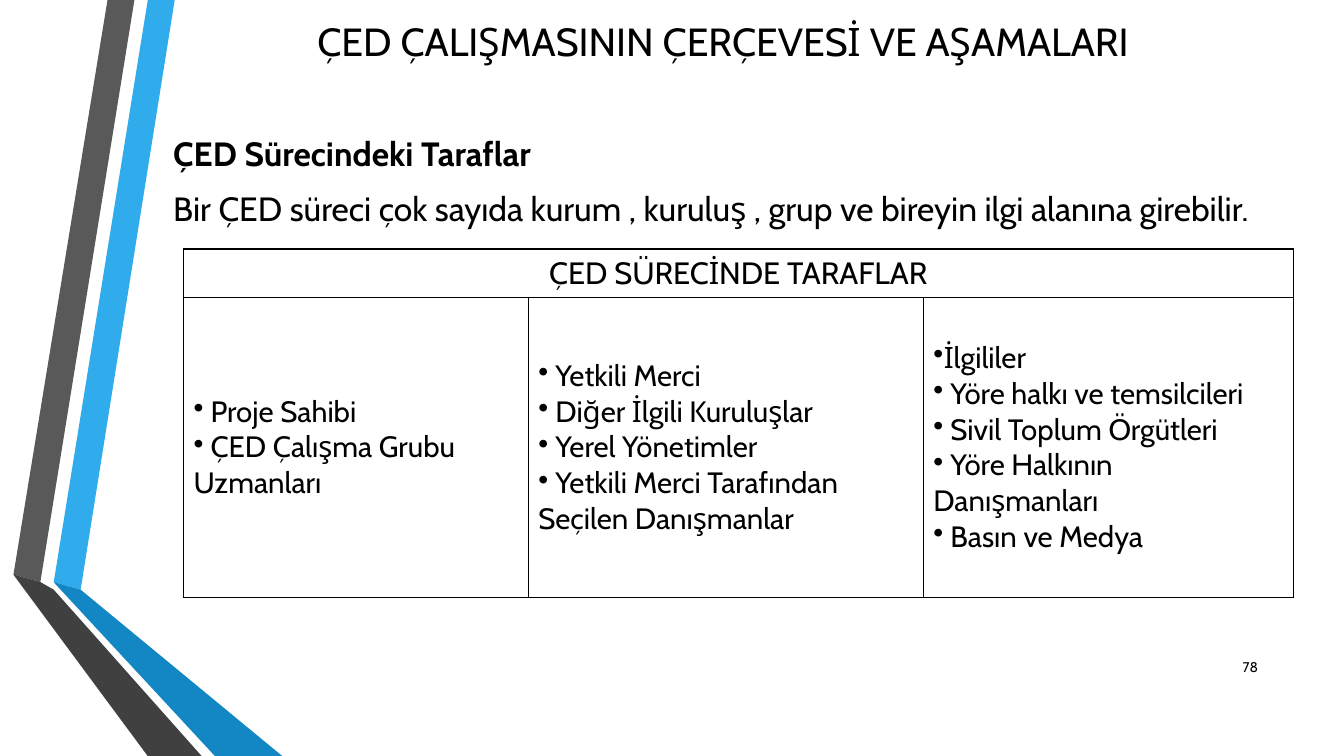
from collections import namedtuple

from lxml import etree
from pptx import Presentation
from pptx.dml.color import RGBColor
from pptx.enum.text import MSO_ANCHOR, PP_ALIGN
from pptx.oxml.ns import qn
from pptx.util import Inches, Pt

LEFT, CENTER, RIGHT = PP_ALIGN.LEFT, PP_ALIGN.CENTER, PP_ALIGN.RIGHT
TOP, MIDDLE = MSO_ANCHOR.TOP, MSO_ANCHOR.MIDDLE

BLACK = RGBColor(0x00, 0x00, 0x00)
SKY = RGBColor(0x30, 0xAC, 0xEC)
BLUE = RGBColor(0x12, 0x87, 0xC3)
NAVY = RGBColor(0x0C, 0x5A, 0x82)
GRAY = RGBColor(0x59, 0x59, 0x59)
CHARCOAL = RGBColor(0x40, 0x40, 0x40)
COAL = RGBColor(0x26, 0x26, 0x26)

FONT = "Cabin"
SLIDE_WIDTH, SLIDE_HEIGHT = Inches(13.33), Inches(7.5)

Box = namedtuple("Box", "left top width height")


def percent_box(left, top, width, height):
    across, down = SLIDE_WIDTH / 100, SLIDE_HEIGHT / 100
    return Box(round(left * across), round(top * down), round(width * across), round(height * down))


SLIDE_BOX = percent_box(0, 0, 100, 100)
TITLE_BOX = percent_box(12.68, 3.33, 82.2, 4.27)
INTRO_BOX = percent_box(12.15, 16.93, 82.2, 14.67)
TABLE_BOX = percent_box(13.65, 32.93, 82.57, 46.13)
NUMBER_BOX = percent_box(89.85, 85.6, 4.5, 5.33)

RIBBONS = [
    (SKY, [(3.75, 77.07), (5.77, 77.73), (12.97, 0), (10.88, 0)]),
    (GRAY, [(10.42, 0), (8.32, 0), (1.2, 76.4), (3.3, 76.93)]),
    (COAL, [(1.2, 76.4), (10.88, 100), (11.32, 100)]),
    (NAVY, [(3.75, 77.2), (15.6, 100), (16.05, 100)]),
    (BLUE, [(3.75, 77.07), (16.05, 100), (21.22, 100), (5.77, 77.73)]),
    (CHARCOAL, [(15.15, 100), (3.6, 77.73), (3.3, 76.93), (1.2, 76.4), (11.32, 100)]),
]

COLUMN_WEIGHTS = [3.42, 3.92, 3.67]
ROW_WEIGHTS = [0.48, 2.98]
TABLE_HEADING = "ÇED SÜRECİNDE TARAFLAR"
PARTIES = [
    [" Proje Sahibi", " ÇED Çalışma Grubu Uzmanları"],
    [" Yetkili Merci", " Diğer İlgili Kuruluşlar", " Yerel Yönetimler",
     " Yetkili Merci Tarafından Seçilen Danışmanlar"],
    ["İlgililer", " Yöre halkı ve temsilcileri", " Sivil Toplum Örgütleri",
     " Yöre Halkının Danışmanları", " Basın ve Medya"],
]


def write_paragraphs(frame, lines, size, alignment=LEFT, space_after=0, bullet=None):
    for index, (text, bold) in enumerate(lines):
        paragraph = frame.paragraphs[0] if index == 0 else frame.add_paragraph()
        paragraph.alignment = alignment
        paragraph.space_after = Pt(space_after)
        run = paragraph.add_run()
        run.text = text
        formats = {"name": FONT, "size": Pt(size), "bold": bold}
        for name, value in formats.items():
            setattr(run.font, name, value)
        run.font.color.rgb = BLACK
        if bullet:
            properties = paragraph._p.get_or_add_pPr()
            properties.set("marL", "0")
            properties.set("indent", "0")
            etree.SubElement(properties, qn("a:buChar")).set("char", bullet)


def add_text(slide, box, lines, size, anchor=MIDDLE, **formats):
    frame = slide.shapes.add_textbox(*box).text_frame
    frame.word_wrap = True
    frame.vertical_anchor = anchor
    write_paragraphs(frame, lines, size, **formats)


def add_ribbons(slide, box):
    scale = (box.width / 100, box.height / 100)
    for color, points in RIBBONS:
        builder = slide.shapes.build_freeform(*points[0], scale=scale)
        builder.add_line_segments(points[1:], close=True)
        shape = builder.convert_to_shape(box.left, box.top)
        shape.shadow.inherit = False
        shape.fill.solid()
        shape.fill.fore_color.rgb = color
        shape.line.fill.background()


def set_borders(cell):
    properties = cell._tc.get_or_add_tcPr()
    for index, side in enumerate(("a:lnL", "a:lnR", "a:lnT", "a:lnB")):
        line = etree.Element(qn(side), w=str(Pt(1)))
        fill = etree.SubElement(line, qn("a:solidFill"))
        etree.SubElement(fill, qn("a:srgbClr")).set("val", str(BLACK))
        properties.insert(index, line)


def add_parties_table(slide, box):
    table = slide.shapes.add_table(len(ROW_WEIGHTS), len(COLUMN_WEIGHTS), *box).table
    for column, weight in zip(table.columns, COLUMN_WEIGHTS):
        column.width = round(box.width * weight / sum(COLUMN_WEIGHTS))
    for row, weight in zip(table.rows, ROW_WEIGHTS):
        row.height = round(box.height * weight / sum(ROW_WEIGHTS))
    for cell in table.iter_cells():
        cell.fill.background()
        cell.vertical_anchor = MIDDLE
        set_borders(cell)
    heading = table.cell(0, 0)
    heading.merge(table.cell(0, len(COLUMN_WEIGHTS) - 1))
    write_paragraphs(heading.text_frame, [(TABLE_HEADING, False)], 22, CENTER)
    for column, parties in enumerate(PARTIES):
        lines = [(party, False) for party in parties]
        write_paragraphs(table.cell(1, column).text_frame, lines, 21, bullet="•")


def main():
    presentation = Presentation()
    presentation.slide_width, presentation.slide_height = SLIDE_WIDTH, SLIDE_HEIGHT
    slide = presentation.slides.add_slide(presentation.slide_layouts[6])
    add_ribbons(slide, SLIDE_BOX)
    add_text(slide, TITLE_BOX, [("ÇED ÇALIŞMASININ ÇERÇEVESİ VE AŞAMALARI", False)], 28,
             alignment=CENTER)
    intro = [
        ("ÇED Sürecindeki Taraflar", True),
        ("Bir ÇED süreci çok sayıda kurum , kuruluş , grup ve bireyin ilgi alanına girebilir.", False),
    ]
    add_text(slide, INTRO_BOX, intro, 24, TOP, space_after=10.8)
    add_text(slide, NUMBER_BOX, [("78", False)], 10, alignment=RIGHT)
    add_parties_table(slide, TABLE_BOX)
    presentation.save("out.pptx")


if __name__ == "__main__":
    main()
